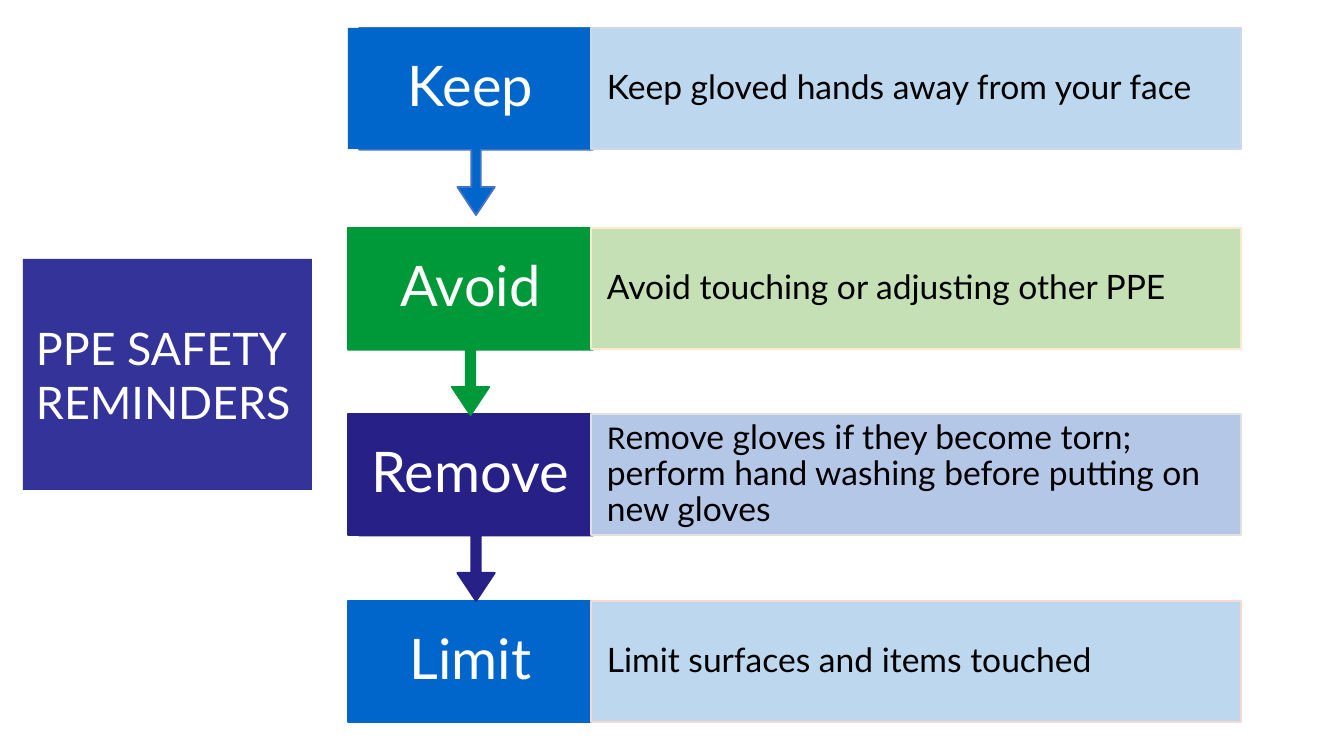
from pptx import Presentation
from pptx.dml.color import RGBColor
from pptx.enum.shapes import MSO_SHAPE
from pptx.enum.text import MSO_ANCHOR, PP_ALIGN
from pptx.util import Pt

PX = 914400 / 134.4
COLORS = {
    "white": "FFFFFF", "black": "000000", "title": "333399",
    "blue": "0066CC", "blue_edge": "4472C4", "green": "009939", "navy": "262087",
    "pale_blue": "BDD7EE", "pale_green": "C5E0B4", "pale_navy": "B4C7E7",
    "keep_edge": "CFD5EA", "avoid_edge": "FFE8CC",
    "remove_edge": "E1E1E1", "limit_edge": "F8D7CE",
}

LABEL_LEFT, LABEL_WIDTH = 348, 245
DETAIL_LEFT, DETAIL_WIDTH = 591, 650
STEP_HEIGHT, CALLOUT_HEIGHT = 121, 187
CALLOUT_PROPORTIONS = (0.05, 0.1, 0.15, 0.65)

STEPS = [
    ("Keep", ["Keep gloved hands away from your face"],
     28, 359, "blue", None, "blue_edge", "pale_blue", "keep_edge"),
    ("Avoid", ["Avoid touching or adjusting other PPE"],
     228, 348, "green", "green", "green", "pale_green", "avoid_edge"),
    ("Remove", ["R", "emove gloves if they become torn; perform hand washing before putting on new gloves"],
     414, 359, "navy", "navy", "navy", "pale_navy", "remove_edge"),
    ("Limit", ["Limit surfaces and items touched"],
     601, None, "blue", "blue", None, "pale_blue", "limit_edge"),
]

presentation = Presentation()
presentation.slide_width = round(1344 * PX)
presentation.slide_height = round(756 * PX)
slide = presentation.slides.add_slide(presentation.slide_layouts[6])


def add_block(kind, left, top, width, height, fill, edge=None, edge_width=1):
    block = slide.shapes.add_shape(kind, *(round(n * PX) for n in (left, top, width, height)))
    block.shadow.inherit = False
    block.fill.solid()
    block.fill.fore_color.rgb = RGBColor.from_string(COLORS[fill])
    if edge:
        block.line.color.rgb = RGBColor.from_string(COLORS[edge])
        block.line.width = Pt(edge_width)
    else:
        block.line.fill.background()
    return block


def write(block, runs, size, color, align, margin, spacing=0.9):
    frame = block.text_frame
    frame.word_wrap = True
    frame.vertical_anchor = MSO_ANCHOR.MIDDLE
    frame.margin_left = frame.margin_right = round(margin * PX)
    paragraph = frame.paragraphs[0]
    paragraph.alignment = align
    paragraph.line_spacing = spacing
    paragraph.font.name = "Lato"
    paragraph.font.size = Pt(size)
    paragraph.font.color.rgb = RGBColor.from_string(COLORS[color])
    for text in runs:
        paragraph.add_run().text = text
    return paragraph


title = add_block(MSO_SHAPE.RECTANGLE, 23, 259, 289, 231, "title")
write(title, ["PPE SAFETY REMINDERS"], 24, "white", PP_ALIGN.LEFT, 13, 1.0)

for action, advice, top, callout_left, fill, edge, arrow_edge, pale, pale_edge in reversed(STEPS):
    if callout_left:
        callout = add_block(MSO_SHAPE.UP_ARROW_CALLOUT, callout_left, top,
                            LABEL_LEFT + LABEL_WIDTH - callout_left, CALLOUT_HEIGHT,
                            fill, arrow_edge)
        callout.rotation = 180
        for index, proportion in enumerate(CALLOUT_PROPORTIONS):
            callout.adjustments[index] = proportion

    label = add_block(MSO_SHAPE.RECTANGLE, LABEL_LEFT, top, LABEL_WIDTH, STEP_HEIGHT,
                      fill, edge, 0.75)
    write(label, [action], 30, "white", PP_ALIGN.CENTER, 19)

    detail = add_block(MSO_SHAPE.RECTANGLE, DETAIL_LEFT, top, DETAIL_WIDTH, STEP_HEIGHT,
                       pale, pale_edge)
    sentence = write(detail, advice, 18, "black", PP_ALIGN.LEFT, 16)
    if len(advice) > 1:
        sentence.runs[0].font.size = Pt(16)

presentation.save("out.pptx")
